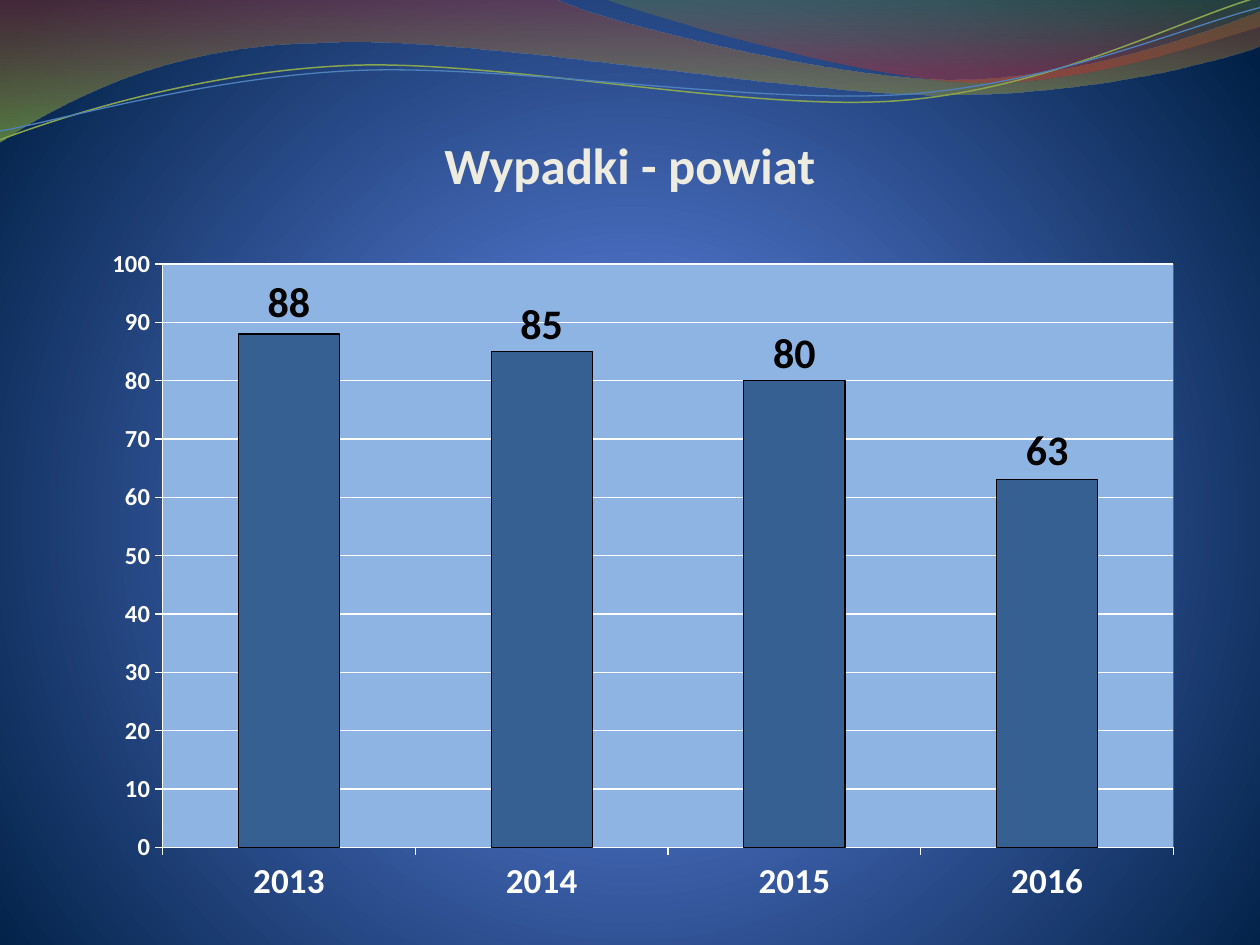
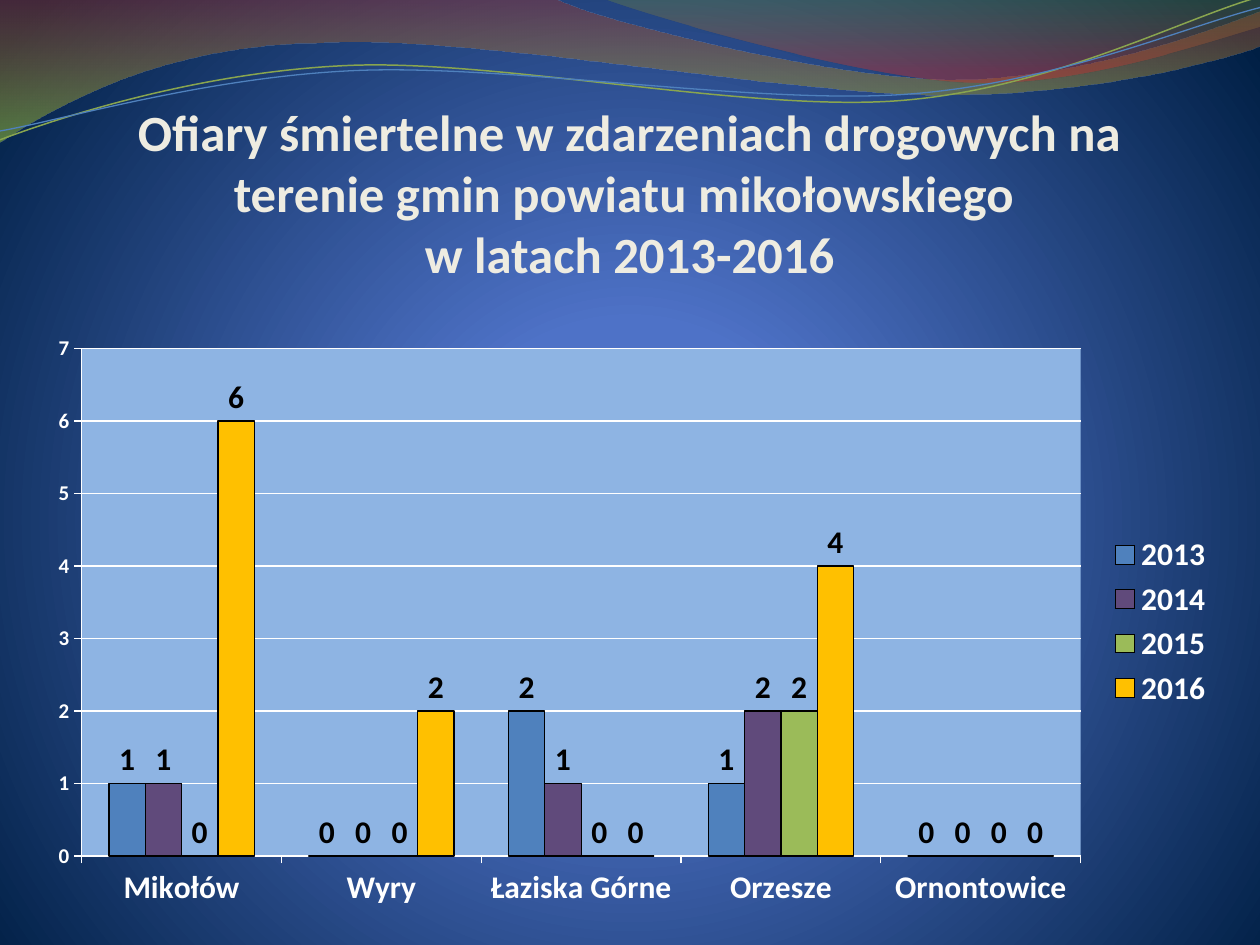
from dataclasses import dataclass

from lxml import etree
from pptx import Presentation
from pptx.chart.data import CategoryChartData
from pptx.dml.color import RGBColor
from pptx.enum.chart import XL_CHART_TYPE, XL_LABEL_POSITION, XL_LEGEND_POSITION, XL_TICK_MARK
from pptx.enum.text import MSO_ANCHOR, MSO_AUTO_SIZE, PP_ALIGN
from pptx.oxml import parse_xml
from pptx.oxml.ns import qn
from pptx.util import Inches, Pt

STACKED = XL_CHART_TYPE.COLUMN_STACKED
CLUSTERED = XL_CHART_TYPE.COLUMN_CLUSTERED
LABEL_ABOVE = XL_LABEL_POSITION.OUTSIDE_END
LEGEND_RIGHT = XL_LEGEND_POSITION.RIGHT
TICK_OUTSIDE = XL_TICK_MARK.OUTSIDE
TICK_NONE = XL_TICK_MARK.NONE
ANCHOR_BOTTOM = MSO_ANCHOR.BOTTOM
NO_AUTOFIT = MSO_AUTO_SIZE.NONE
CENTER = PP_ALIGN.CENTER
TITLE_ONLY = 5

SLIDE_W, SLIDE_H = 10, 7.5
A_NS = "http://schemas.openxmlformats.org/drawingml/2006/main"
C_NS = "http://schemas.openxmlformats.org/drawingml/2006/chart"
UNITS_PER_INCH = 1000


@dataclass(frozen=True)
class Theme:
    font: str = "Calibri"
    title: str = "EEECE1"
    axis_text: str = "FFFFFF"
    label_text: str = "000000"
    plot_fill: str = "8EB4E3"
    outline: str = "000000"
    district: str = "376092"
    years: tuple = ("4F81BD", "604A7B", "9BBB59", "FFC000")
    background: tuple = ((0, "4D75D6", 100), (25, "4E72C7", 100), (100, "001F44", 100))
    wide_wave: tuple = ((0, "973330", 45), (100, "95C238", 55))
    right_wave: tuple = ((0, "769537", 30), (80, "BE3330", 45))
    green_line: str = "89A54F"
    blue_line: str = "4F81BD"
    title_size: float = 29
    chart_size: float = 18
    hairline: float = 0.75


@dataclass(frozen=True)
class Box:
    left: float
    top: float
    width: float
    height: float

    def lengths(self):
        return (Inches(self.left * SLIDE_W), Inches(self.top * SLIDE_H),
                Inches(self.width * SLIDE_W), Inches(self.height * SLIDE_H))


THEME = Theme()
TITLE_TOP = 0.103
CHART_GAP = 0.043
CHART_BOTTOM = 0.972
LABEL_LIFT = 0.04

WIDE_WAVE = [
    [(0, -0.01)],
    [(4.4, -0.01)],
    [(4.76, 0.17), (6.64, 0.63), (7.58, 0.63)],
    [(8.53, 0.63), (9.58, 0.26), (10, 0.09)],
    [(10.01, 0.36)],
    [(9.83, 0.44), (8.7, 0.76), (7.46, 0.75)],
    [(6.22, 0.75), (3.82, 0.28), (2.57, 0.34)],
    [(1.29, 0.35), (0.46, 0.83), (-0.01, 1.13)],
]
RIGHT_WAVE = [
    [(4.79, -0.01)],
    [(5.09, 0.11), (6.82, 0.62), (7.69, 0.65)],
    [(8.56, 0.69), (9.61, 0.32), (10, 0.21)],
    [(10, 0)],
]
GREEN_LINE = [
    [(0, 1.11)],
    [(0.48, 0.93), (1.58, 0.57), (2.77, 0.52)],
    [(3.95, 0.47), (5.93, 0.89), (7.13, 0.8)],
    [(8.33, 0.71), (9.38, 0.15), (9.98, -0.02)],
]
BLUE_LINE = [
    [(0, 1.04)],
    [(0.47, 0.96), (1.64, 0.61), (2.83, 0.56)],
    [(4.03, 0.51), (5.97, 0.83), (7.17, 0.75)],
    [(8.36, 0.67), (9.41, 0.21), (10, 0.06)],
]


def rgb(color):
    return RGBColor.from_string(color)


def style_font(font, size, color):
    font.name = THEME.font
    font.size = Pt(size)
    font.bold = True
    font.color.rgb = rgb(color)


def style_line(line, color, width=THEME.hairline):
    line.color.rgb = rgb(color)
    line.width = Pt(width)


def replace_fill(owner, stops, direction):
    marks = "".join(
        f'<a:gs pos="{pos * 1000}"><a:srgbClr val="{color}">'
        f'<a:alpha val="{alpha * 1000}"/></a:srgbClr></a:gs>'
        for pos, color, alpha in stops)
    gradient = parse_xml(f'<a:gradFill xmlns:a="{A_NS}" rotWithShape="1">'
                         f'<a:gsLst>{marks}</a:gsLst>{direction}</a:gradFill>')
    owner.replace(owner.find(qn("a:solidFill")), gradient)


def bend(wave, segments):
    corners = iter(wave.element.xpath(".//a:path/a:lnTo"))
    for segment in segments[1:]:
        handles = [next(corners) for _ in segment]
        if len(handles) == 3:
            curve = etree.Element(qn("a:cubicBezTo"))
            handles[0].addprevious(curve)
            for handle in handles:
                curve.append(handle[0])
                handle.getparent().remove(handle)


def draw_wave(shapes, segments, closed):
    points = [(round(x * UNITS_PER_INCH), round(y * UNITS_PER_INCH))
              for segment in segments for x, y in segment]
    builder = shapes.build_freeform(*points[0], scale=Inches(1) / UNITS_PER_INCH)
    builder.add_line_segments(points[1:], close=closed)
    wave = builder.convert_to_shape()
    wave.shadow.inherit = False
    bend(wave, segments)
    return wave


def dress_master(master, slide):
    master.background.fill.solid()
    replace_fill(master.element.xpath(".//p:bgPr")[0], THEME.background,
                 '<a:path path="circle"><a:fillToRect l="10000" t="110000" '
                 'r="10000" b="100000"/></a:path>')
    waves = []
    for segments, stops in ((WIDE_WAVE, THEME.wide_wave), (RIGHT_WAVE, THEME.right_wave)):
        wave = draw_wave(slide.shapes, segments, True)
        wave.line.fill.background()
        wave.fill.solid()
        replace_fill(wave.element.spPr, stops, '<a:lin ang="5400000" scaled="1"/>')
        waves.append(wave)
    for segments, color, width in ((GREEN_LINE, THEME.green_line, 0.85),
                                   (BLUE_LINE, THEME.blue_line, THEME.hairline)):
        wave = draw_wave(slide.shapes, segments, False)
        wave.fill.background()
        style_line(wave.line, color, width)
        waves.append(wave)
    for place, wave in enumerate(waves, start=2):
        master.shapes.element.insert(place, wave.element)


def place_title(slide, box, wording):
    title = slide.shapes.title
    title.left, title.top, title.width, title.height = box.lengths()
    frame = title.text_frame
    frame.text = wording
    frame.word_wrap = True
    frame.auto_size = NO_AUTOFIT
    frame.vertical_anchor = ANCHOR_BOTTOM
    frame.margin_left = frame.margin_right = frame.margin_bottom = 0
    frame.margin_top = Inches(0.05)
    paragraph = frame.paragraphs[0]
    paragraph.alignment = CENTER
    for run in paragraph.runs:
        style_font(run.font, THEME.title_size, THEME.title)


def set_layout(owner, place, **settings):
    for old in owner.findall(qn("c:layout")):
        owner.remove(old)
    layout = etree.Element(qn("c:layout"))
    manual = etree.SubElement(layout, qn("c:manualLayout"))
    for key, value in settings.items():
        etree.SubElement(manual, qn(f"c:{key}")).set("val", str(value))
    owner.insert(place, layout)


def style_axis(axis, size):
    axis.major_tick_mark = TICK_OUTSIDE
    axis.minor_tick_mark = TICK_NONE
    style_font(axis.tick_labels.font, size, THEME.axis_text)
    style_line(axis.format.line, THEME.axis_text)


def place_chart(slide, box, kind, categories, rows, colors, plot_box, top, step,
                category_size, value_size, label_size):
    data = CategoryChartData()
    data.categories = categories
    for name, values in rows.items():
        data.add_series(name, values)
    chart = slide.shapes.add_chart(kind, *box.lengths(), data).chart
    chart.has_title = False
    chart.has_legend = False
    chart.font.name = THEME.font
    chart.font.size = Pt(THEME.chart_size)
    chart.font.color.rgb = rgb(THEME.axis_text)

    style_axis(chart.category_axis, category_size)
    scale = chart.value_axis
    style_axis(scale, value_size)
    scale.minimum_scale, scale.maximum_scale, scale.major_unit = 0, top, step
    scale.has_major_gridlines = True
    style_line(scale.major_gridlines.format.line, THEME.axis_text)

    area = chart.element.xpath(".//c:plotArea")[0]
    set_layout(area, 0, layoutTarget="inner", xMode="edge", yMode="edge",
               x=plot_box.left, y=plot_box.top, w=plot_box.width, h=plot_box.height)
    area.append(parse_xml(
        f'<c:spPr xmlns:c="{C_NS}" xmlns:a="{A_NS}"><a:solidFill>'
        f'<a:srgbClr val="{THEME.plot_fill}"/></a:solidFill>'
        f'<a:ln><a:noFill/></a:ln></c:spPr>'))

    plot = chart.plots[0]
    plot.vary_by_categories = False
    plot.gap_width = 150
    for series, color in zip(plot.series, colors):
        series.format.fill.solid()
        series.format.fill.fore_color.rgb = rgb(color)
        style_line(series.format.line, THEME.outline)
        labels = series.data_labels
        labels.show_value = True
        style_font(labels.font, label_size, THEME.label_text)
        if kind == CLUSTERED:
            labels.position = LABEL_ABOVE
    return chart


def lift_labels(chart, values, top, plot_height, size):
    series = chart.plots[0].series[0]
    for index in range(len(values)):
        style_font(series.points[index].data_label.font, size, THEME.label_text)
    for label, value in zip(chart.element.xpath(".//c:dLbl"), values):
        rise = value / top * plot_height / 2 + LABEL_LIFT
        set_layout(label, 1, x=0, y=round(-rise, 2))
    for leader in chart.element.xpath(".//c:showLeaderLines"):
        leader.set("val", "0")


def split_slide(title_height):
    chart_top = TITLE_TOP + title_height + CHART_GAP
    return (Box(0.05, TITLE_TOP, 0.9, title_height),
            Box(0.028, chart_top, 0.945, CHART_BOTTOM - chart_top))


def accidents_slide(slide):
    title_box, chart_box = split_slide(0.103)
    place_title(slide, title_box, "Wypadki - powiat")
    accidents = (88, 85, 80, 63)
    plot_box = Box(0.107, 0.042, 0.849, 0.854)
    chart = place_chart(slide, chart_box, STACKED, ("2013", "2014", "2015", "2016"),
                        {"Series 1": accidents}, (THEME.district,), plot_box,
                        100, 10, 20, 14, 24)
    chart.plots[0].overlap = 100
    lift_labels(chart, accidents, 100, plot_box.height, 24)


def fatalities_slide(slide):
    title_box, chart_box = split_slide(0.197)
    place_title(slide, title_box,
                "Ofiary śmiertelne w zdarzeniach drogowych na terenie gmin "
                "powiatu mikołowskiego \vw latach 2013-2016")
    fatalities = {
        "2013": (1, 0, 2, 1, 0),
        "2014": (1, 0, 1, 2, 0),
        "2015": (0, 0, 0, 2, 0),
        "2016": (6, 2, 0, 4, 0),
    }
    communes = ("Mikołów", "Wyry", "Łaziska Górne", "Orzesze", "Ornontowice")
    chart = place_chart(slide, chart_box, CLUSTERED, communes, fatalities, THEME.years,
                        Box(0.039, 0.041, 0.839, 0.854), 7, 1,
                        THEME.chart_size, 12, THEME.chart_size)
    chart.has_legend = True
    chart.legend.position = LEGEND_RIGHT
    chart.legend.include_in_layout = False
    style_font(chart.legend.font, THEME.chart_size, THEME.axis_text)


def main():
    deck = Presentation()
    deck.slide_width, deck.slide_height = Inches(SLIDE_W), Inches(SLIDE_H)
    layout = deck.slide_layouts[TITLE_ONLY]
    slides = [deck.slides.add_slide(layout) for _ in range(2)]
    dress_master(deck.slide_master, slides[0])
    accidents_slide(slides[0])
    fatalities_slide(slides[1])
    deck.save("out.pptx")


if __name__ == "__main__":
    main()
